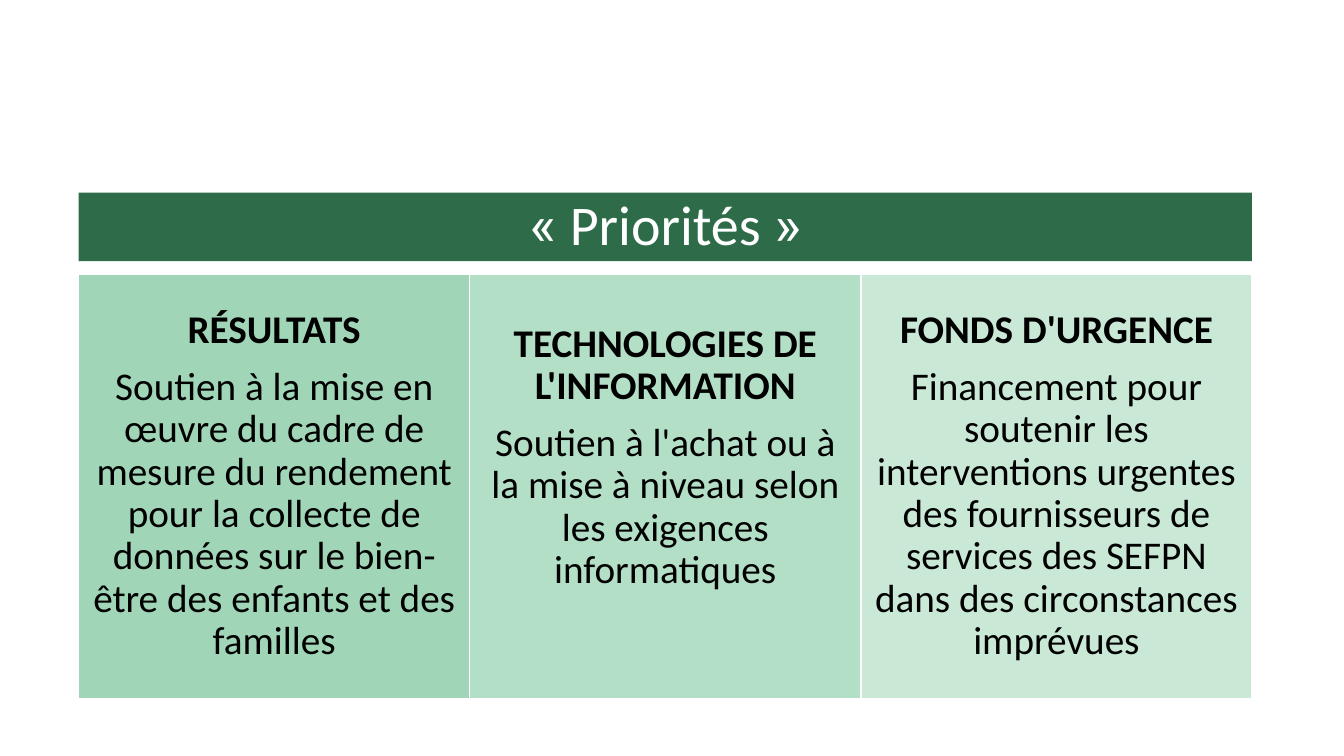
from lxml import etree
from pptx import Presentation
from pptx.dml.color import RGBColor
from pptx.enum.shapes import MSO_SHAPE
from pptx.enum.text import MSO_ANCHOR, MSO_AUTO_SIZE, PP_ALIGN
from pptx.oxml.ns import qn
from pptx.util import Pt

RECT = MSO_SHAPE.RECTANGLE
MIDDLE = MSO_ANCHOR.MIDDLE
NO_FIT = MSO_AUTO_SIZE.NONE
CENTER = PP_ALIGN.CENTER

WHITE = RGBColor(0xFF, 0xFF, 0xFF)
BLACK = RGBColor(0, 0, 0)
DARK = RGBColor(0x2E, 0x6C, 0x49)
GREEN = RGBColor(0x78, 0xC6, 0x99)

LEFT, WIDTH = 56.16, 838.08
# Heading, body, opacity in percent, extra room below the text
PRIORITIES = [
    ("RÉSULTATS",
     "Soutien à la mise en œuvre du cadre de mesure du rendement pour la "
     "collecte de données sur le bien-être des enfants et des familles",
     70, 0),
    ("TECHNOLOGIES DE L'INFORMATION",
     "Soutien à l'achat ou à la mise à niveau selon les exigences "
     "informatiques",
     55, 41),
    ("FONDS D'URGENCE",
     "Financement pour soutenir les interventions urgentes des fournisseurs "
     "de services des SEFPN dans des circonstances imprévues",
     40, 0),
]


def add_text(para, text, size=28, font="Calibri", color=BLACK, bold=False):
    para.alignment = CENTER
    para.line_spacing = 0.9
    run = para.add_run()
    run.text = text
    run.font.size = Pt(size)
    run.font.name = font
    run.font.color.rgb = color
    run.font.bold = bold


def set_frame(frame, inset, extra=0):
    frame.word_wrap = True
    frame.auto_size = NO_FIT
    frame.vertical_anchor = MIDDLE
    frame.margin_left = frame.margin_right = frame.margin_top = Pt(inset)
    frame.margin_bottom = Pt(inset + extra)


def set_alpha(shape, percent):
    color = shape.fill._xPr.find(qn("a:solidFill"))[0]
    etree.SubElement(color, qn("a:alpha"), val=str(percent * 1000))


def draw_title(slide, x, y, w, h):
    title = slide.shapes.title
    title.left, title.top, title.width, title.height = map(Pt, (x, y, w, h))
    title.fill.solid()
    title.fill.fore_color.rgb = DARK
    set_frame(title.text_frame, 12)
    para = title.text_frame.paragraphs[0]
    for text, font in (("« ", "Roboto"), ("Priorités", "Calibri"),
                       (" »", "Roboto")):
        add_text(para, text, size=40, font=font, color=WHITE)


def draw_column(slide, x, y, w, h, head, body, alpha, extra):
    box = slide.shapes.add_shape(RECT, *map(Pt, (x, y, w, h)))
    box.shadow.inherit = False
    box.fill.solid()
    box.fill.fore_color.rgb = GREEN
    set_alpha(box, alpha)
    box.line.color.rgb = WHITE
    box.line.width = Pt(1)
    frame = box.text_frame
    set_frame(frame, 8.6, extra)
    add_text(frame.paragraphs[0], head, bold=True)
    para = frame.add_paragraph()
    para.space_before = Pt(10.4)
    add_text(para, body)


def draw_columns(slide, x, y, w, h):
    step = w / len(PRIORITIES)
    for i, item in enumerate(PRIORITIES):
        draw_column(slide, x + i * step, y, step, h, *item)


def main():
    deck = Presentation()
    deck.slide_width, deck.slide_height = Pt(960), Pt(540)
    slide = deck.slides.add_slide(deck.slide_layouts[5])
    # Title bar
    draw_title(slide, LEFT, 137.6, WIDTH, 49)
    # Three priorities
    draw_columns(slide, LEFT, 196, WIDTH, 303)
    deck.save("out.pptx")


if __name__ == "__main__":
    main()
